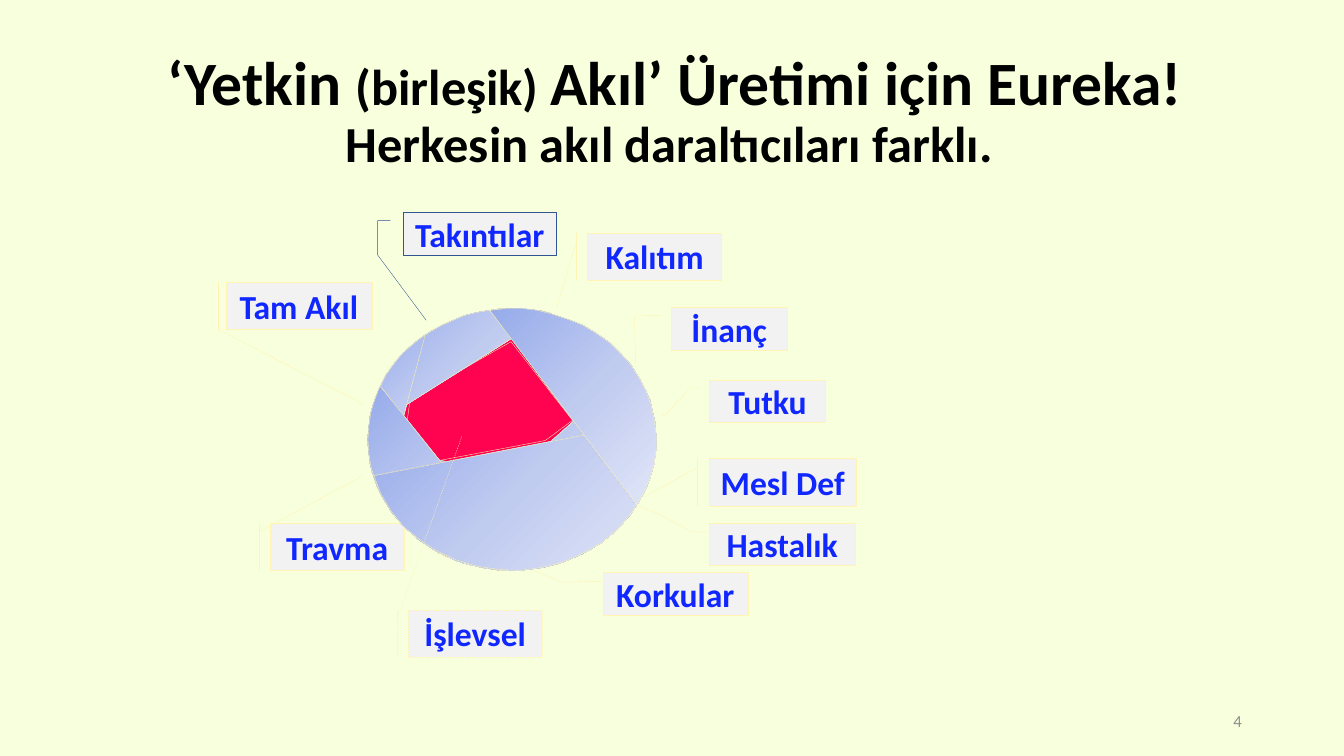
from copy import deepcopy
from dataclasses import dataclass
from math import cos, radians, sin

from lxml import etree
from pptx import Presentation
from pptx import util as u
from pptx.dml.color import RGBColor
from pptx.enum import dml, shapes, text
from pptx.oxml.ns import qn

UNIT = u.Cm(0.0254)  # drawing grid: all positions below count these steps
ACCENT_BAR = shapes.MSO_SHAPE.LINE_CALLOUT_1_BORDER_AND_ACCENT_BAR
BENT = shapes.MSO_SHAPE.LINE_CALLOUT_3
LABEL_HEIGHT = {ACCENT_BAR: 47, BENT: 42}
ARC_STEPS = 20


@dataclass(frozen=True)
class Theme:
    font: str = "Calibri"
    background: str = "F8FFDD"
    title: str = "000000"
    label: str = "1027FF"
    label_fill: str = "F2F2F2"
    outline: str = "FFF4B3"
    strong_outline: str = "325491"
    mind: str = "FF0350"
    number: str = "8C8C8C"
    slice_gradient: tuple = ((0, "96ABEA"), (0.5, "C0CBF0"), (1, "E0E5F7"))
    title_size: int = 44
    subtitle_size: int = 36
    label_size: int = 24
    number_size: int = 12
    line_width: float = 0.25


def grid(*steps):
    return [u.Cm(UNIT.cm * step) for step in steps]


def rgb(code):
    return RGBColor.from_string(code)


def rim(angle):
    """Point on the rim of the mind circle, clockwise from the right, in degrees."""
    return 508 + 143 * cos(radians(angle)), 436 + 130 * sin(radians(angle))


class MindSlide:
    def __init__(self, deck, theme):
        self.theme = theme
        self.slide = deck.slides.add_slide(deck.slide_layouts[5])
        self.slide.background.fill.solid()
        self.slide.background.fill.fore_color.rgb = rgb(theme.background)

    def set_font(self, paragraph, size, color, bold=False):
        font = paragraph.font
        font.name, font.size, font.bold = self.theme.font, u.Pt(size), bold
        font.color.rgb = rgb(color)

    def outline(self, item, color=None):
        item.line.color.rgb = rgb(color or self.theme.outline)
        item.line.width = u.Pt(self.theme.line_width)

    def finish(self, shape, fill, line=None):
        shape.shadow.inherit = False
        shape.fill.solid()
        shape.fill.fore_color.rgb = rgb(fill)
        self.outline(shape, line)

    def title(self, box, lines):
        """Fill the title; each line is a list of (wording, size) pairs."""
        heading = self.slide.shapes.title
        heading.left, heading.top, heading.width, heading.height = grid(*box)
        heading.text_frame.vertical_anchor = text.MSO_ANCHOR.MIDDLE
        paragraph = heading.text_frame.paragraphs[0]
        paragraph.alignment = text.PP_ALIGN.CENTER
        paragraph.line_spacing = 0.9
        self.set_font(paragraph, self.theme.title_size, self.theme.title, True)
        for index, line in enumerate(lines):
            if index:
                paragraph.add_line_break()
            for wording, size in line:
                run = paragraph.add_run()
                run.text, run.font.size = wording, u.Pt(size)

    def page_number(self, box, number):
        frame = self.slide.shapes.add_textbox(*grid(*box)).text_frame
        frame.word_wrap = True
        frame.vertical_anchor = text.MSO_ANCHOR.MIDDLE
        frame.text = number
        frame.paragraphs[0].alignment = text.PP_ALIGN.RIGHT
        self.set_font(frame.paragraphs[0], self.theme.number_size, self.theme.number)

    def circle(self, box):
        whole = self.slide.shapes.add_shape(shapes.MSO_SHAPE.OVAL, *grid(*box))
        self.finish(whole, self.theme.mind)

    def callout(self, wording, kind, left, top, width, leader, line=None, dashed=False):
        """Label whose leader values replace the last adjustments of its preset."""
        label = self.slide.shapes.add_shape(kind, *grid(left, top, width, LABEL_HEIGHT[kind]))
        first = len(label.adjustments) - len(leader)
        for index, value in enumerate(leader, first):
            label.adjustments[index] = value
        self.finish(label, self.theme.label_fill, line)
        if dashed:
            label.line.dash_style = dml.MSO_LINE.DASH
        frame = label.text_frame
        frame.word_wrap = False
        frame.vertical_anchor = text.MSO_ANCHOR.MIDDLE
        frame.text = wording
        frame.paragraphs[0].alignment = text.PP_ALIGN.CENTER
        self.set_font(frame.paragraphs[0], self.theme.label_size, self.theme.label, True)

    def cut(self, start, end):
        ends = grid(*rim(start), *rim(end))
        chord = self.slide.shapes.add_connector(shapes.MSO_CONNECTOR.STRAIGHT, *ends)
        self.outline(chord)
        etree.SubElement(chord._element.spPr, qn("a:effectLst"))

    def polygon(self, points):
        builder = self.slide.shapes.build_freeform(*points[0], scale=UNIT)
        builder.add_line_segments(points[1:], close=True)
        area = builder.convert_to_shape()
        self.finish(area, self.theme.mind)
        return area

    def slice(self, start, end):
        """Circle segment between two rim angles, with the diagonal gradient."""
        step = (end - start) / ARC_STEPS
        area = self.polygon([rim(start + step * i) for i in range(ARC_STEPS + 1)])
        area.fill.gradient()
        area.fill.gradient_angle = 315
        stop_list = area._element.spPr.find(".//" + qn("a:gsLst"))
        stop_list.insert(1, deepcopy(stop_list[0]))
        for stop, (position, color) in zip(area.fill.gradient_stops, self.theme.slice_gradient):
            stop.position = position
            stop.color.rgb = rgb(color)


LOW_LEADER = (0.21, -0.01, 0.21, -0.12)

# Wording, kind, left, top, width, leader
CALLOUTS = [
    ("Kalıtım", ACCENT_BAR, 583, 231, 133, (1.58, -0.23)),
    ("Mesl Def", ACCENT_BAR, 704, 455, 145, (0.81, -0.45)),
    ("Korkular", BENT, 598, 568, 144, (*LOW_LEADER, 0.23, -0.28, -0.11, -0.52)),
    ("Travma", ACCENT_BAR, 268, 519, 133, (-1, 0.69)),
    ("İnanç", BENT, 666, 305, 115, (0.19, -0.32, 1.02, -0.31, 1.31, -0.31)),
    ("Tutku", BENT, 704, 377, 115, (0.81, -0.38, 0.85, -0.41)),
    ("Tam Akıl", ACCENT_BAR, 224, 280, 145, (1, -0.05, 2.59, 0.95)),
    ("Hastalık", BENT, 704, 519, 144, (*LOW_LEADER, -0.23, -0.36, -0.4, -0.49)),
]

REMAINING_MIND = [(407, 396), (507, 339), (568, 417), (541, 437), (435, 457), (404, 417)]

# Rim angles between which each narrowing cuts a slice off the circle
NARROWINGS = [(185, 286), (154, 233), (-33, 124), (-7, 163),
              (27, 177), (84, 204), (-8, 164), (261, 390)]


def main():
    deck = Presentation()
    deck.slide_width, deck.slide_height = grid(1333.33, 750)
    theme = Theme()
    page = MindSlide(deck, theme)
    page.title((41, 30, 1258, 164), [
        [("‘Yetkin ", theme.title_size), ("(birleşik) ", theme.subtitle_size),
         ("Akıl’ Üretimi için Eureka!", theme.title_size)],
        [("Herkesin akıl daraltıcıları farklı. ", theme.subtitle_size)],
    ])
    page.page_number((942, 695, 300, 40), "4")
    page.circle((366, 307, 282, 251))
    for entry in CALLOUTS:
        page.callout(*entry)
    page.callout("Takıntılar", BENT, 400, 211, 152, (2.54, 0.15), line=theme.strong_outline)
    page.polygon(REMAINING_MIND)
    for start, end in NARROWINGS:
        page.cut(start, end)
        page.slice(start, end)
    page.callout("İşlevsel", ACCENT_BAR, 405, 605, 133, (-3.66, 0.4), dashed=True)
    deck.save("out.pptx")


if __name__ == "__main__":
    main()
